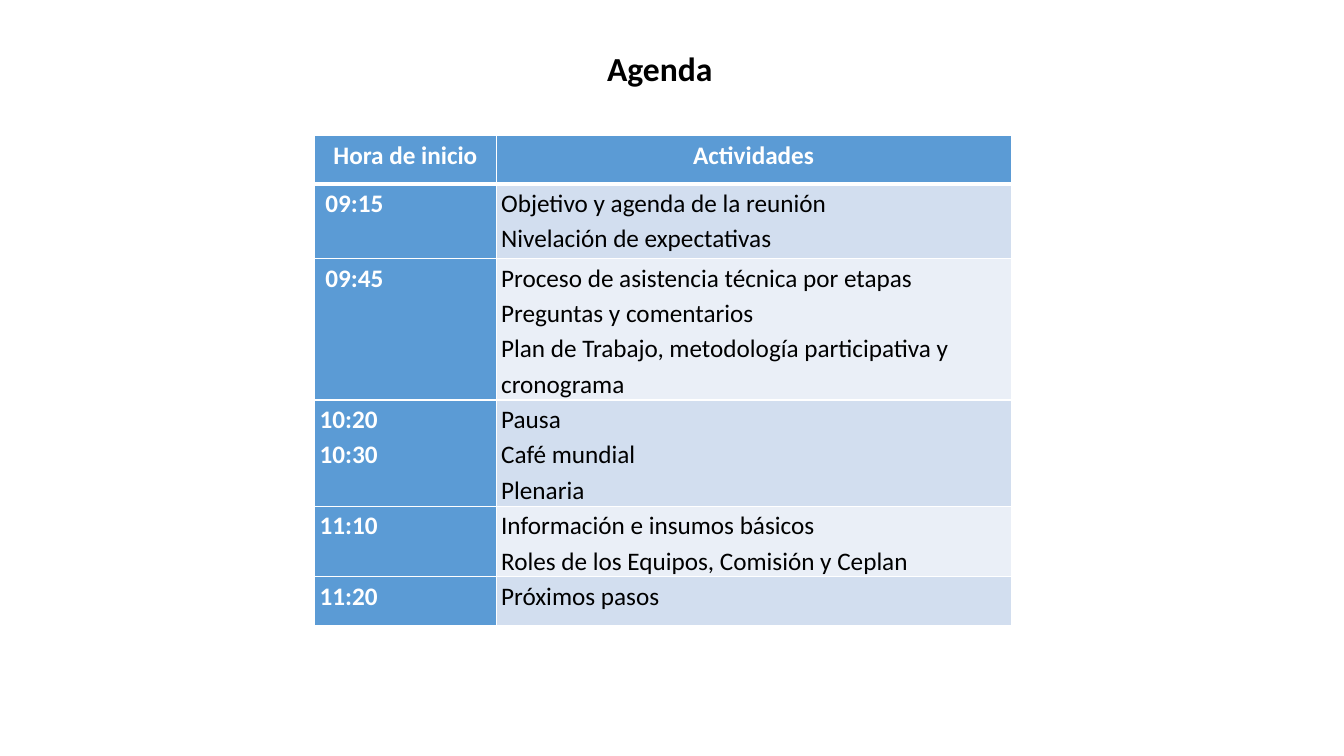
from lxml import etree
from pptx import Presentation
from pptx.dml.color import RGBColor
from pptx.enum import text
from pptx.oxml import ns
from pptx.util import Pt

COLORS = {"white": "FFFFFF", "black": "000000", "blue": "5B9BD5",
          "band_dark": "D2DEEF", "band_light": "EAEFF7"}
COLUMN_WIDTHS = [129.6, 367.9]
ROW_HEIGHTS = [34.6, 53.3, 99.4, 74.2, 49.7, 34.6]
HEADINGS = (["Hora de inicio"], ["Actividades"])
SESSIONS = [
    ([" 09:15"], ["Objetivo y agenda de la reunión", "Nivelación de expectativas"]),
    ([" 09:45"], ["Proceso de asistencia técnica por etapas Preguntas y comentarios",
                  "Plan de Trabajo, metodología participativa y cronograma"]),
    (["10:20", "10:30"], ["Pausa", "Café mundial", "Plenaria"]),
    (["11:10"], ["Información e insumos básicos",
                 "Roles de los Equipos, Comisión y Ceplan"]),
    (["11:20"], ["Próximos pasos"]),
]


def rgb(name):
    return RGBColor.from_string(COLORS[name])


def write(frame, lines, size=18, color="black", bold=False, centered=False, spacing=1.0):
    frame.word_wrap = True
    for i, line in enumerate(lines):
        paragraph = frame.paragraphs[0] if i == 0 else frame.add_paragraph()
        paragraph.alignment = text.PP_ALIGN.CENTER if centered else text.PP_ALIGN.LEFT
        paragraph.line_spacing = spacing
        run = paragraph.add_run()
        run.text = line
        run.font.name = "Calibri"
        run.font.size = Pt(size)
        run.font.bold = bold
        run.font.color.rgb = rgb(color)


def set_borders(cell, top, bottom):
    # Border lines come before the fill in the cell properties
    properties = cell._tc.get_or_add_tcPr()
    for i, (side, width) in enumerate([("L", 1), ("R", 1), ("T", top), ("B", bottom)]):
        line = etree.Element(ns.qn(f"a:ln{side}"), w=str(Pt(width)))
        fill = etree.SubElement(line, ns.qn("a:solidFill"))
        etree.SubElement(fill, ns.qn("a:srgbClr"), val=COLORS["white"])
        properties.insert(i, line)


def add_title(slide, left, top, width, height):
    title = slide.shapes.add_textbox(Pt(left), Pt(top), Pt(width), Pt(height))
    write(title.text_frame, ["Agenda"], size=24, bold=True, centered=True)


def add_agenda(slide, left, top, width, height):
    rows = [HEADINGS, *SESSIONS]
    agenda = slide.shapes.add_table(len(rows), len(HEADINGS), Pt(left), Pt(top),
                                    Pt(width), Pt(height)).table
    for column, share in zip(agenda.columns, COLUMN_WIDTHS):
        column.width = Pt(width * share / sum(COLUMN_WIDTHS))
    for row, share in zip(agenda.rows, ROW_HEIGHTS):
        row.height = Pt(height * share / sum(ROW_HEIGHTS))

    for r, entries in enumerate(rows):
        for c, lines in enumerate(entries):
            cell = agenda.cell(r, c)
            label = r == 0 or c == 0
            band = "band_dark" if r % 2 else "band_light"
            cell.margin_left = cell.margin_right = Pt(3.6)
            cell.margin_top = cell.margin_bottom = 0
            cell.fill.solid()
            cell.fill.fore_color.rgb = rgb("blue" if label else band)
            set_borders(cell, top=3 if r == 1 else 1, bottom=3 if r == 0 else 1)
            write(cell.text_frame, lines, color="white" if label else "black",
                  bold=label, centered=r == 0, spacing=1.15)


def main():
    deck = Presentation()
    deck.slide_width, deck.slide_height = Pt(960), Pt(540)
    slide = deck.slides.add_slide(deck.slide_layouts[6])
    add_agenda(slide, 224.8, 96.8, 497.5, 345.8)
    add_title(slide, 219.6, 31, 503.3, 36.7)
    deck.save("out.pptx")


if __name__ == "__main__":
    main()
